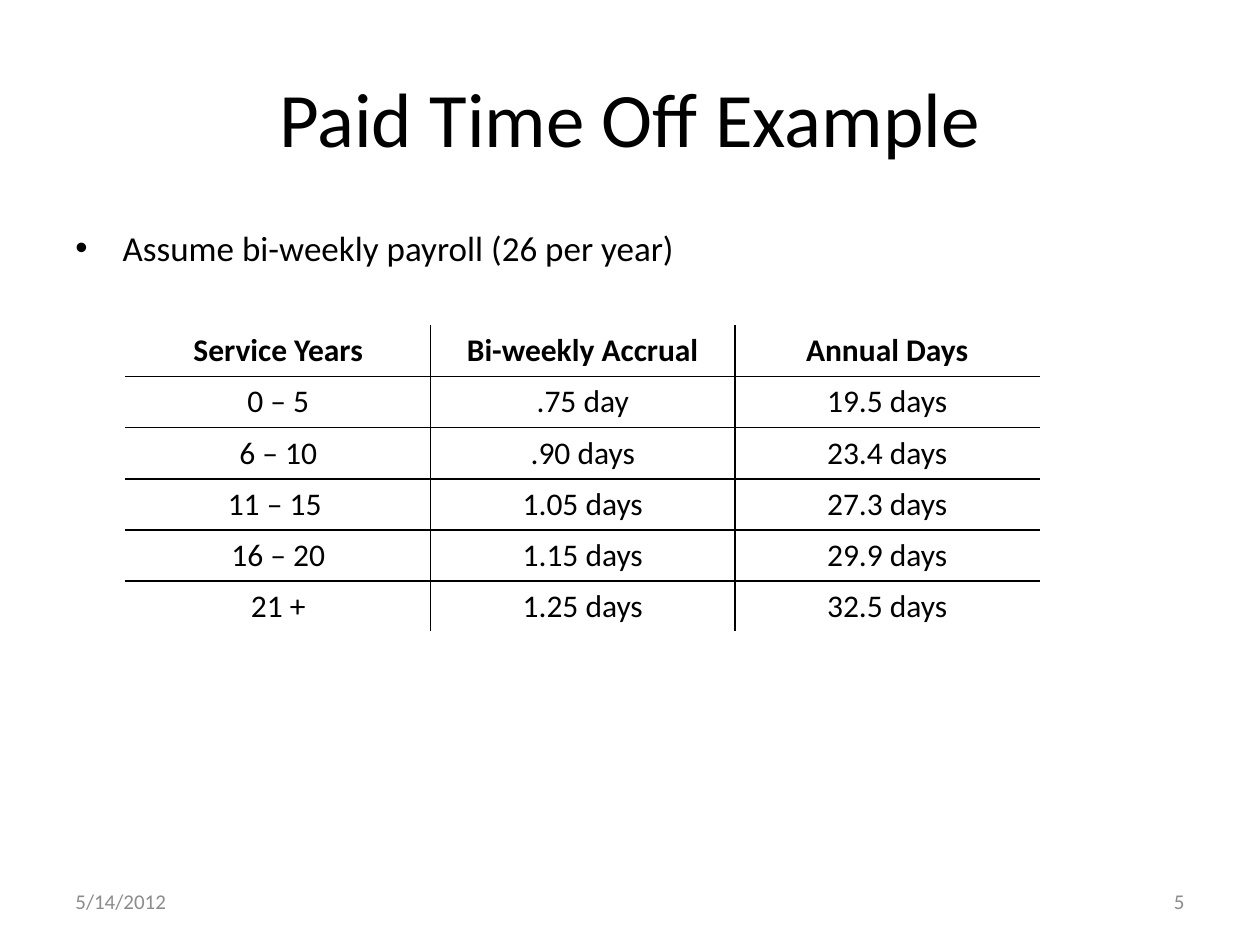
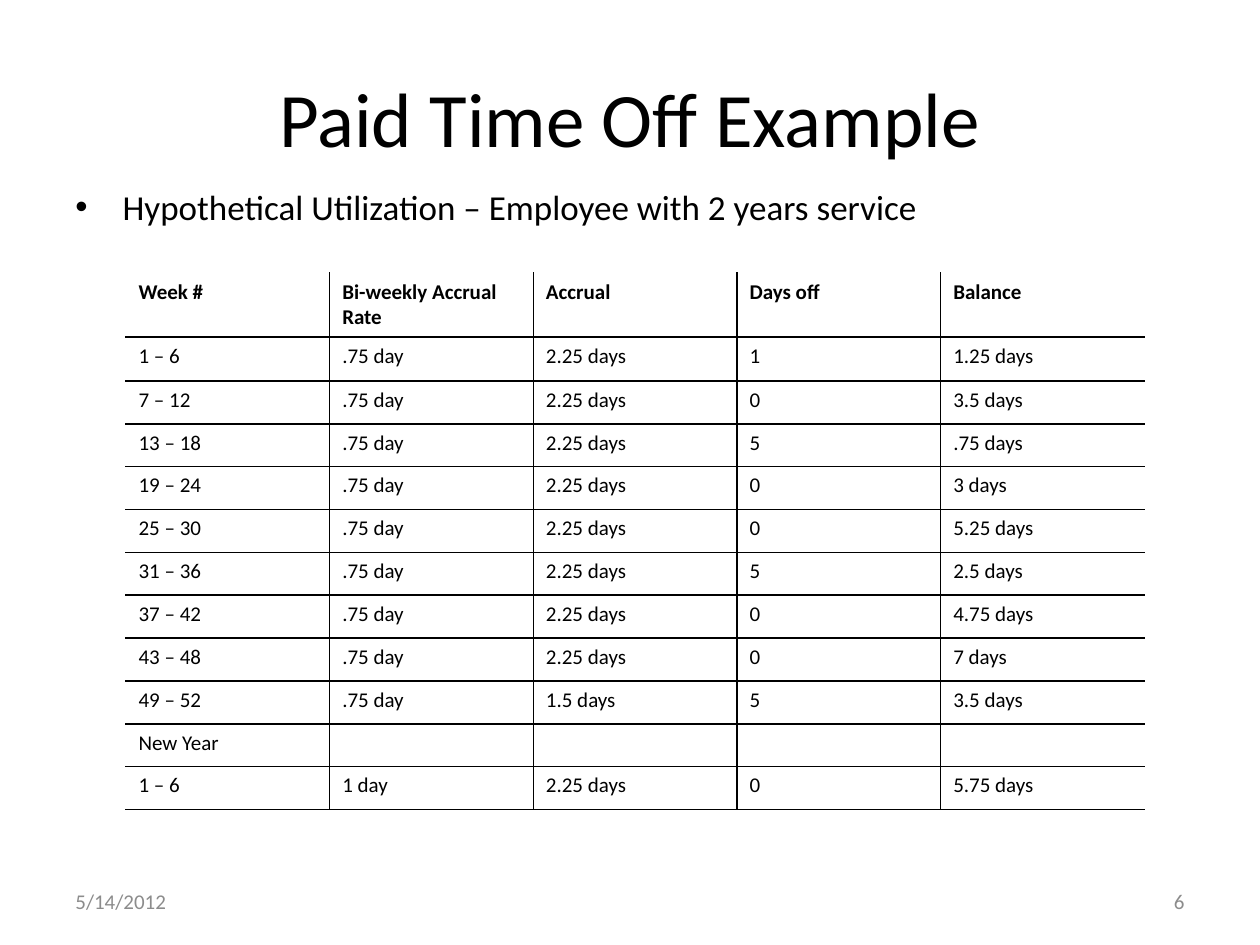
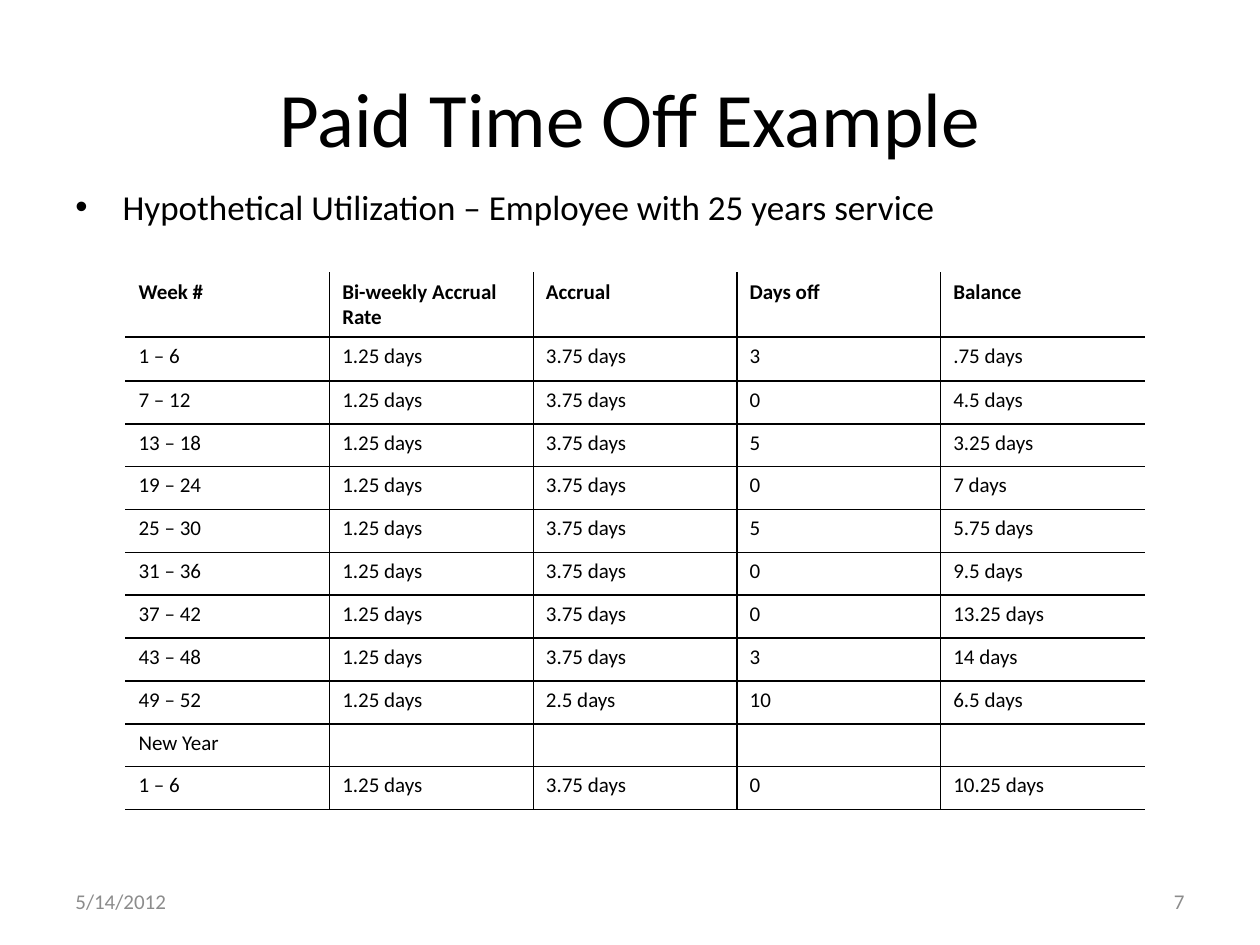
"""Build the three paid time off example slides."""
from dataclasses import dataclass

from lxml import etree
from pptx import Presentation
from pptx.dml.color import RGBColor
from pptx.enum import text as t
from pptx.oxml.ns import qn
from pptx.util import Pt

FONT = "Calibri"
INK, PAPER, GREY = "000000", "FFFFFF", "8C8C8C"
LEFT, CENTER, RIGHT = t.PP_ALIGN.LEFT, t.PP_ALIGN.CENTER, t.PP_ALIGN.RIGHT
TITLE = "Paid Time Off Example"
DATE = "5/14/2012"


@dataclass
class Box:
    left: float
    top: float
    width: float
    height: float


@dataclass
class Grid:
    rows: list
    left: float
    top: float
    width: float
    heights: list
    size: float
    align: t.PP_ALIGN
    base: str


@dataclass
class Page:
    number: int
    point: str
    top: float
    grid: Grid


HEAD = Box(36, 21.6, 648, 90)
DAY = Box(36, 500.4, 168, 28.8)
FOLIO = Box(516, 500.4, 168, 28.8)

SCALE = [
    ("Service Years", "Bi-weekly Accrual", "Annual Days"),
    ("0 – 5", ".75 day", "19.5 days"),
    ("6 – 10", ".90 days", "23.4 days"),
    ("11 – 15 ", "1.05 days", "27.3 days"),
    ("16 – 20", "1.15 days", "29.9 days"),
    ("21 +", "1.25 days", "32.5 days"),
]
FIELDS = ("Week #", "Bi-weekly Accrual Rate", "Accrual", "Days off", "Balance")
WEEKS = ["1 – 6", "7 – 12", "13 – 18", "19 – 24", "25 – 30", "31 – 36",
         "37 – 42", "43 – 48", "49 – 52"]


def ledger(rate: str, gain: str, last: str, off: list, left: list, fresh: tuple) -> list:
    """Return the rows of one year of use, followed by the new year."""
    gains = [gain] * (len(WEEKS) - 1) + [last]
    year = [(week, rate, got, used, f"{rest} days")
            for week, got, used, rest in zip(WEEKS, gains, off, left)]
    return [FIELDS, *year, ("New Year", "", "", "", ""), (WEEKS[0], *fresh)]


def usage(rows: list) -> Grid:
    """Return the grid that holds a ledger."""
    return Grid(rows, 72, 156, 582, [25.2] * 2 + [24.5] * 10, 12, LEFT, INK)


SHORT = ledger(".75 day", "2.25 days", "1.5 days", list("105005005"),
               ["1.25", "3.5", ".75", "3", "5.25", "2.5", "4.75", "7", "3.5"],
               ("1 day", "2.25 days", "0", "5.75 days"))
LONG = ledger("1.25 days", "3.75 days", "2.5 days", [*"30505003", "10"],
              [".75", "4.5", "3.25", "7", "5.75", "9.5", "13.25", "14", "6.5"],
              ("1.25 days", "3.75 days", "0", "10.25 days"))
PAGES = [
    Page(5, "Assume bi-weekly payroll (26 per year)", 126,
         Grid(SCALE, 72, 186, 522, [29.2] * 6, 18, CENTER, PAPER)),
    Page(6, "Hypothetical Utilization – Employee with 2 years service", 102.2, usage(SHORT)),
    Page(7, "Hypothetical Utilization – Employee with 25 years service", 102.2, usage(LONG)),
]


def tint(value: str) -> RGBColor:
    """Turn a hex string into a colour."""
    return RGBColor.from_string(value)


def style(para, size: float, align=LEFT, color: str = INK, bold: bool = False) -> None:
    """Set the font and alignment of a paragraph."""
    para.alignment = align
    font = para.font
    font.name, font.size, font.bold = FONT, Pt(size), bold
    font.color.rgb = tint(color)


def place(shape, box: Box) -> None:
    """Move a shape to a box."""
    shape.left, shape.top = Pt(box.left), Pt(box.top)
    shape.width, shape.height = Pt(box.width), Pt(box.height)


def label(slide, box: Box, words: str, size: float, align=LEFT, color: str = INK,
          anchor=t.MSO_ANCHOR.MIDDLE):
    """Add a text box and return its paragraph."""
    shape = slide.shapes.add_textbox(0, 0, 0, 0)
    frame = shape.text_frame
    frame.word_wrap, frame.auto_size = True, t.MSO_AUTO_SIZE.NONE
    frame.vertical_anchor = anchor
    place(shape, box)
    para = frame.paragraphs[0]
    para.text = words
    style(para, size, align, color)
    return para


def bullet(slide, words: str, top: float) -> None:
    """Add the bullet line above the table."""
    para = label(slide, Box(36, top, 648, 510 - top), words, 20, anchor=t.MSO_ANCHOR.TOP)
    para.space_before, para.space_after = Pt(4), Pt(12)
    props = para._p.get_or_add_pPr()
    props.set("marL", str(Pt(27)))
    props.set("indent", str(Pt(-27)))
    font, mark = etree.Element(qn("a:buFont")), etree.Element(qn("a:buChar"))
    font.set("typeface", "Arial")
    mark.set("char", "•")
    fonts = props.find(qn("a:defRPr"))
    fonts.addprevious(font)
    fonts.addprevious(mark)


def edge(cell, side: str, color: str) -> None:
    """Draw one border of a cell."""
    line = etree.SubElement(cell._tc.get_or_add_tcPr(), qn(f"a:ln{side}"), w=str(Pt(1)))
    fill = etree.SubElement(line, qn("a:solidFill"))
    etree.SubElement(fill, qn("a:srgbClr"), val=color)


def table(slide, grid: Grid) -> None:
    """Add a table with ruled inner lines and open sides."""
    high, wide = len(grid.rows), len(grid.rows[0])
    frame = slide.shapes.add_table(high, wide, Pt(grid.left), Pt(grid.top),
                                   Pt(grid.width), Pt(sum(grid.heights)))
    body = frame.table
    body.first_row = body.horz_banding = False
    for row, height in zip(body.rows, grid.heights):
        row.height = Pt(height)
    for y, row in enumerate(grid.rows):
        for x, words in enumerate(row):
            cell = body.cell(y, x)
            para = cell.text_frame.paragraphs[0]
            if words:
                para.text = words
            style(para, grid.size, grid.align, bold=y == 0)
            edge(cell, "L", INK if x else PAPER)
            edge(cell, "R", INK if x < wide - 1 else PAPER)
            edge(cell, "T", INK if y else PAPER)
            edge(cell, "B", INK if y < high - 1 else grid.base)
            cell.fill.background()


def build(deck, page: Page) -> None:
    """Add one slide."""
    slide = deck.slides.add_slide(deck.slide_layouts[5])
    title = slide.shapes.title
    place(title, HEAD)
    title.text_frame.text = TITLE
    title.text_frame.vertical_anchor = t.MSO_ANCHOR.MIDDLE
    style(title.text_frame.paragraphs[0], 44, CENTER)
    bullet(slide, page.point, page.top)
    label(slide, DAY, DATE, 12, color=GREY)
    label(slide, FOLIO, str(page.number), 12, RIGHT, GREY)
    table(slide, page.grid)


def main() -> None:
    """Build and save the deck."""
    deck = Presentation()
    deck.slide_width, deck.slide_height = Pt(720), Pt(540)
    for page in PAGES:
        build(deck, page)
    deck.save("out.pptx")


if __name__ == "__main__":
    main()
